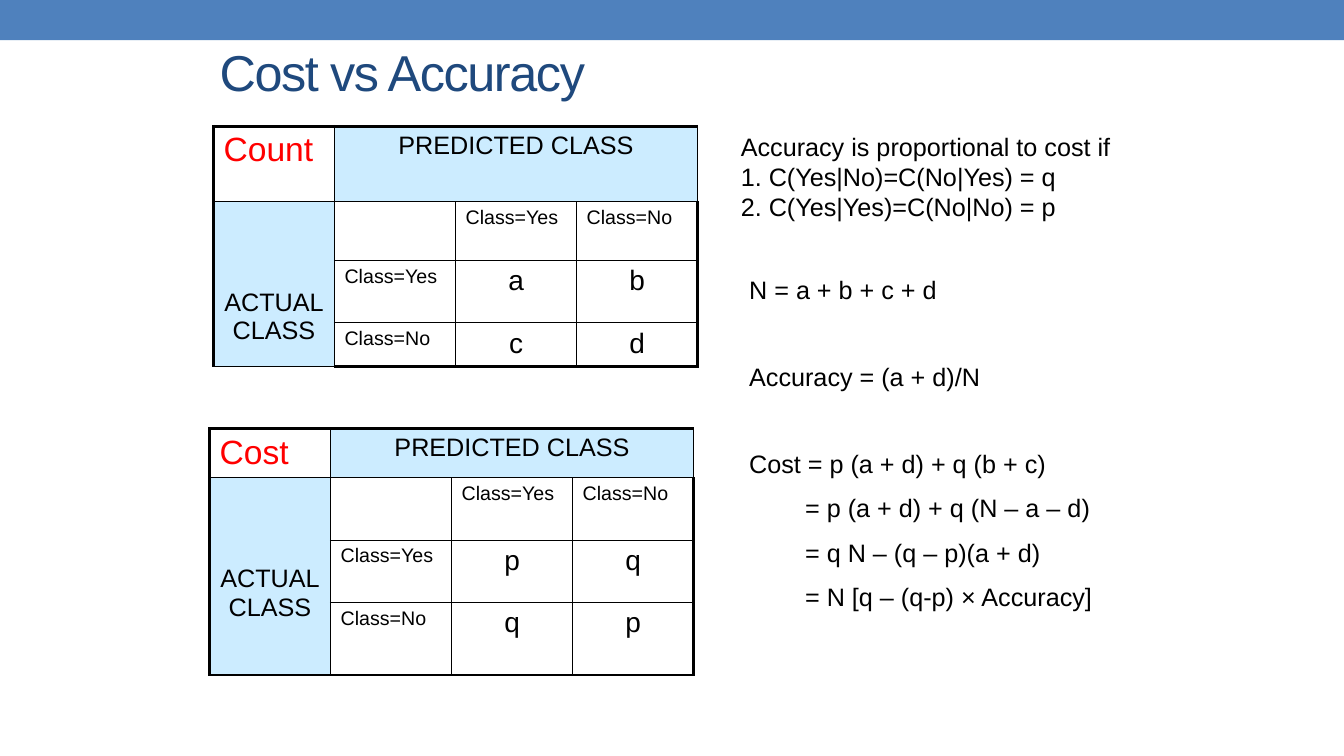
from dataclasses import dataclass

from lxml.etree import SubElement
from pptx import Presentation
from pptx.dml.color import RGBColor as RGB
from pptx.enum.shapes import MSO_SHAPE as SHAPE
from pptx.enum.text import MSO_ANCHOR as ANCHOR, MSO_AUTO_SIZE as AUTO, PP_ALIGN as ALIGN
from pptx.oxml.ns import qn
from pptx.util import Cm, Pt


@dataclass(frozen=True)
class Theme:
    font: str = "Arial"
    band: str = "4F81BD"
    title: str = "1F497D"
    ink: str = "000000"
    corner: str = "FF0000"
    header: str = "CCECFF"
    paper: str = "FFFFFF"
    title_size: int = 36
    corner_size: int = 24
    value_size: int = 20
    body_size: int = 18
    label_size: int = 14
    outer: float = 2.25
    inner: float = 1


T = Theme()


def style(p, size, color=T.ink, **fmt):
    for name, value in fmt.items():
        setattr(p, name, value)
    for r in p.runs:
        for name, value in {"name": T.font, "size": Pt(size), "bold": False}.items():
            setattr(r.font, name, value)
        r.font.color.rgb = RGB.from_string(color)


def fill(obj, color):
    obj.fill.solid()
    obj.fill.fore_color.rgb = RGB.from_string(color)


def add_band(slide, box):
    sp = slide.shapes.add_shape(SHAPE.RECTANGLE, *map(Cm, box))
    sp.shadow.inherit = False
    fill(sp, T.band)
    sp.line.fill.background()


def add_title(slide, box, text):
    sp = slide.shapes.title
    for name, value in zip(("left", "top", "width", "height"), box):
        setattr(sp, name, Cm(value))
    tf = sp.text_frame
    tf.text = text
    for name, value in {"auto_size": AUTO.NONE, "vertical_anchor": ANCHOR.MIDDLE}.items():
        setattr(tf, name, value)
    p = tf.paragraphs[0]
    style(p, T.title_size, T.title, alignment=ALIGN.LEFT)
    p.runs[0].font._element.set("spc", "-100")


def set_borders(cell, edges):
    tcPr = cell._tc.get_or_add_tcPr()
    for side, outer in edges.items():
        width = T.outer if outer else T.inner
        ln = SubElement(tcPr, qn(f"a:ln{side}"), w=str(Pt(width)))
        line_fill = SubElement(ln, qn("a:solidFill"))
        SubElement(line_fill, qn("a:srgbClr"), val=T.ink)


def add_matrix(slide, box, heights, corner, values):
    left, top, width = box
    grid = [
        [corner, "PREDICTED CLASS", "", ""],
        ["ACTUAL\vCLASS", "", "Class=Yes", "Class=No"],
        ["", "Class=Yes", *values[0]],
        ["", "Class=No", *values[1]],
    ]
    n = len(grid)
    frame = slide.shapes.add_table(n, n, Cm(left), Cm(top), Cm(width), Cm(sum(heights)))
    table = frame.table
    table.first_row = table.horz_banding = False
    for column in table.columns:
        column.width = Cm(width / n)
    for row, height in zip(table.rows, heights):
        row.height = Cm(height)
    for i, texts in enumerate(grid):
        for j, text in enumerate(texts):
            cell = table.cell(i, j)
            set_borders(cell, {"L": j == 0, "R": j == n - 1, "T": i == 0, "B": i == n - 1})
            header = (i == 0) != (j == 0)
            fill(cell, T.header if header else T.paper)
            cell.text = text
            p = cell.text_frame.paragraphs[0]
            if i == j == 0:
                style(p, T.corner_size, T.corner)
            elif header:
                style(p, T.body_size, alignment=ALIGN.CENTER)
            elif i > 1 and j > 1:
                style(p, T.value_size, alignment=ALIGN.CENTER)
            else:
                style(p, T.label_size)
    table.cell(0, 1).merge(table.cell(0, n - 1))
    actual = table.cell(1, 0)
    actual.merge(table.cell(n - 1, 0))
    actual.margin_top = Cm(2.2)


def add_text(slide, box, lines):
    tf = slide.shapes.add_textbox(*map(Cm, box)).text_frame
    tf.word_wrap = True
    for i, (text, before, indent) in enumerate(lines):
        p = tf.paragraphs[0] if i == 0 else tf.add_paragraph()
        p.text = text
        style(p, T.body_size, space_before=Pt(before))
        if indent:
            p._p.get_or_add_pPr().set("marL", str(Cm(indent)))


def build_slide(prs):
    slide = prs.slides.add_slide(prs.slide_layouts[5])
    add_band(slide, (0, 0, 33.87, 1.01))
    add_title(slide, (5.28, 1.07, 23.01, 1.47), "Cost vs Accuracy")
    add_matrix(slide, (5.38, 3.18, 12.2), (1.9, 1.48, 1.57, 1.1), "Count", ("ab", "cd"))
    add_matrix(slide, (5.28, 10.8, 12.2), (1.24, 1.57, 1.57, 1.83), "Cost", ("pq", "qp"))
    tight, wide, step = 10, 40.7, 1.41
    add_text(slide, (18.63, 6.78, 9.96, 10.19), [
        ("N = a + b + c + d", 0, 0),
        ("Accuracy = (a + d)/N", wide, 0),
        ("Cost = p (a + d) + q (b + c)", wide, 0),
        ("= p (a + d) + q (N – a – d)", tight, step),
        ("= q N – (q – p)(a + d)", tight, step),
        ("= N [q – (q-p) × Accuracy]", tight, step),
    ])
    add_text(slide, (18.42, 3.18, 10.36, 2.54), [
        ("Accuracy is proportional to cost if", 0, 0),
        ("1. C(Yes|No)=C(No|Yes) = q", 0, 0),
        ("2. C(Yes|Yes)=C(No|No) = p", 0, 0),
    ])


def main():
    prs = Presentation()
    prs.slide_width, prs.slide_height = Cm(33.87), Cm(19.05)
    build_slide(prs)
    prs.save("out.pptx")


if __name__ == "__main__":
    main()
